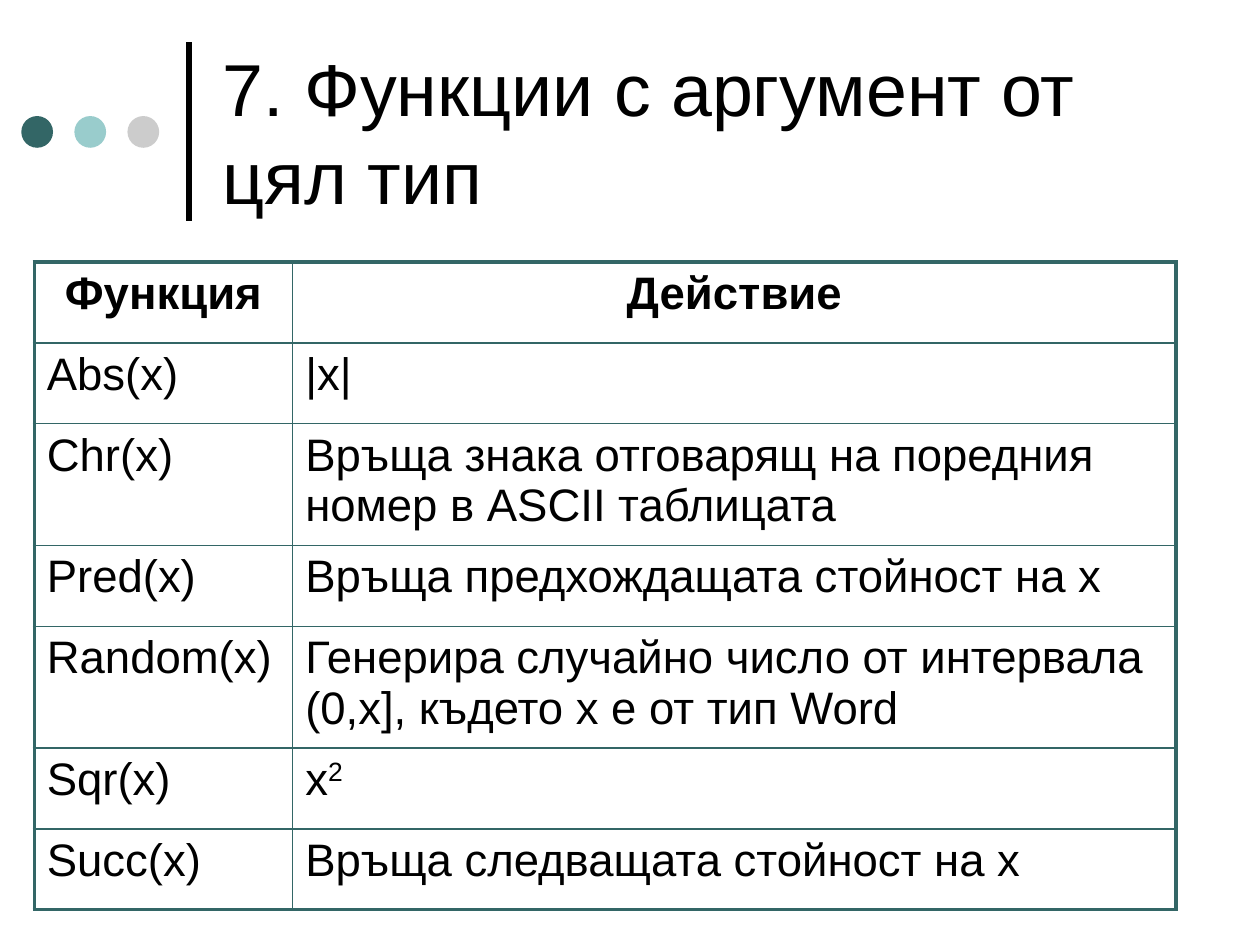
from dataclasses import dataclass

from lxml.etree import SubElement
from pptx import Presentation
from pptx.dml.color import RGBColor
from pptx.enum.shapes import MSO_CONNECTOR as Connector, MSO_SHAPE as Shape
from pptx.enum.text import MSO_ANCHOR as Anchor, PP_ALIGN as Align
from pptx.oxml.ns import qn
from pptx.util import Cm, Pt

DOT_COLOURS = ["336666", "99CCCC", "CCCCCC"]
TITLE = "7. Функции с аргумент от цял тип"
ROWS = [
    ("Функция", "Действие"),
    ("Abs(x)", "|x|"),
    ("Chr(x)", "Връща знака отговарящ на поредния номер в ASCII таблицата"),
    ("Pred(x)", "Връща предхождащата стойност на x"),
    ("Random(x)", "Генерира случайно число от интервала (0,x], където x е от тип Word"),
    ("Sqr(x)", "x^2"),
    ("Succ(x)", "Връща следващата стойност на x"),
]


def colour(code):
    return RGBColor.from_string(code)


@dataclass
class Slide:
    """Holds the style and the current slide, and draws each kind of element."""

    page: object
    font: str = "Arial"
    ink: str = "000000"
    accent: str = "336666"
    title_size: int = 42
    table_size: int = 26
    thin: float = 1
    thick: float = 2.25

    def add_text(self, frame, text, size, bold=False, align=Align.LEFT):
        para = frame.paragraphs[0]
        para.alignment = align
        for index, part in enumerate(text.split("^")):
            span = para.add_run()
            span.text = part
            for name, value in {"name": self.font, "size": Pt(size), "bold": bold}.items():
                setattr(span.font, name, value)
            span.font.color.rgb = colour(self.ink)
            if index % 2:
                span.font._element.set("baseline", "30000")

    def dot(self, left, top, size, code):
        shape = self.page.shapes.add_shape(Shape.OVAL, Cm(left), Cm(top), Cm(size), Cm(size))
        shape.shadow.inherit = False
        shape.fill.solid()
        shape.fill.fore_color.rgb = colour(code)
        shape.line.fill.background()

    def rule(self, left, bottom, top, width):
        line = self.page.shapes.add_connector(
            Connector.STRAIGHT, Cm(left), Cm(bottom), Cm(left), Cm(top))
        line.line.color.rgb = colour(self.ink)
        line.line.width = Pt(width)
        SubElement(line._element.spPr, qn("a:effectLst"))

    def title(self, text, *place):
        box = self.page.shapes.add_textbox(*map(Cm, place))
        box.text_frame.word_wrap = True
        box.text_frame.vertical_anchor = Anchor.MIDDLE
        self.add_text(box.text_frame, text, self.title_size)

    def border(self, cell, outer_sides):
        properties = cell._tc.get_or_add_tcPr()
        for index, side in enumerate("LRTB"):
            width = Pt(self.thick if side in outer_sides else self.thin)
            edge = SubElement(properties, qn(f"a:ln{side}"), w=str(int(width)))
            fill = SubElement(edge, qn("a:solidFill"))
            SubElement(fill, qn("a:srgbClr"), val=self.accent)
            properties.insert(index, edge)

    def table(self, rows, left, top, widths, row_height):
        table = self.page.shapes.add_table(
            len(rows), len(widths), Cm(left), Cm(top),
            Cm(sum(widths)), Cm(row_height * len(rows))).table
        table.first_row = table.horz_banding = False
        for column, width in zip(table.columns, widths):
            column.width = Cm(width)
        for y, texts in enumerate(rows):
            for x, text in enumerate(texts):
                cell = table.cell(y, x)
                cell.fill.background()
                edges = {"L": x == 0, "R": x == len(widths) - 1,
                         "T": y == 0, "B": y == len(rows) - 1}
                self.border(cell, [side for side, outer in edges.items() if outer])
                header = y == 0
                self.add_text(cell.text_frame, text, self.table_size, header,
                              Align.CENTER if header else Align.LEFT)


def main():
    deck = Presentation()
    deck.slide_width, deck.slide_height = Cm(25.4), Cm(19.05)
    slide = Slide(deck.slides.add_slide(deck.slide_layouts[6]))
    slide.rule(3.81, 4.45, 0.84, 3)
    for index, code in enumerate(DOT_COLOURS):
        slide.dot(0.43 + 1.07 * index, 2.34, 0.64, code)
    slide.title(TITLE, 4.24, 0.53, 19.48, 4.24)
    slide.table(ROWS, 0.69, 5.28, [5.21, 17.81], 1.63)
    deck.save("out.pptx")


if __name__ == "__main__":
    main()
